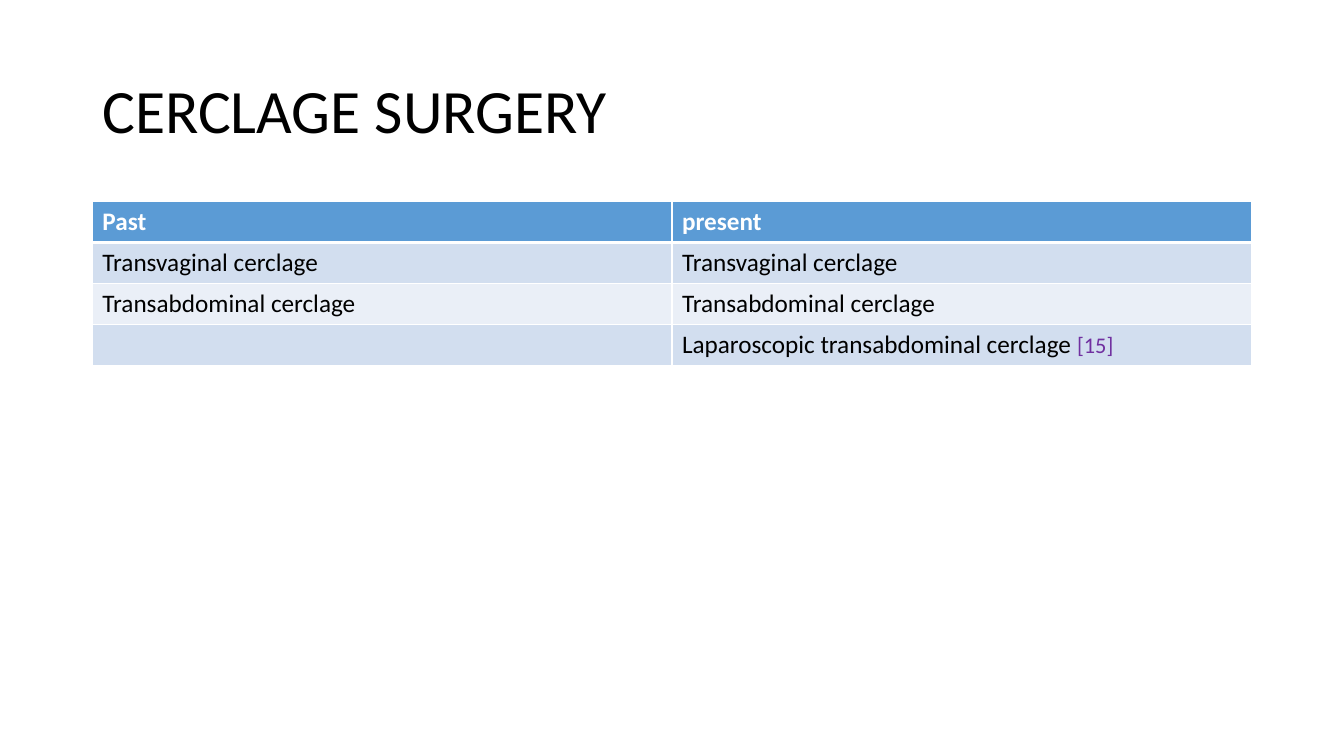
from lxml import etree
from pptx import Presentation
from pptx.dml.color import RGBColor
from pptx.enum import text
from pptx.oxml import ns
from pptx.util import Pt

FONT = "Calibri"
COLORS = {
    "text": "000000",
    "white": "FFFFFF",
    "header": "5B9BD5",
    "band_dark": "D2DEEF",
    "band_light": "EAEFF7",
    "citation": "7030A0",
}
LEFT, WIDTH = 66, 828
ROW_HEIGHT = 29.2

# Each cell is a list of (text, size, color) runs
HEADERS = ["Past", "present"]
ROWS = [
    ["Transvaginal cerclage", "Transvaginal cerclage"],
    ["Transabdominal cerclage", "Transabdominal cerclage"],
    ["", "Laparoscopic transabdominal cerclage "],
]
CITATION = "[15]"


def color(name):
    return RGBColor.from_string(COLORS[name])


def format_run(run, size, color_name, bold=False):
    run.font.name = FONT
    run.font.size = Pt(size)
    run.font.bold = bold
    run.font.color.rgb = color(color_name)


def add_title(slide, title):
    box = slide.shapes.add_textbox(Pt(LEFT), Pt(28.8), Pt(WIDTH), Pt(104.4))
    frame = box.text_frame
    frame.word_wrap = True
    frame.vertical_anchor = text.MSO_ANCHOR.MIDDLE
    frame.text = title
    paragraph = frame.paragraphs[0]
    paragraph.line_spacing = 0.9
    format_run(paragraph.runs[0], 44, "text")


def set_borders(cell, top, bottom):
    properties = cell._tc.get_or_add_tcPr()
    for side, width in (("L", 1), ("R", 1), ("T", top), ("B", bottom)):
        line = etree.SubElement(properties, ns.qn(f"a:ln{side}"), w=str(Pt(width)))
        fill = etree.SubElement(line, ns.qn("a:solidFill"))
        etree.SubElement(fill, ns.qn("a:srgbClr"), val=COLORS["white"])


def fill_cell(cell, content, row):
    # Thick rule between the header and the body
    set_borders(cell, 3 if row == 1 else 1, 3 if row == 0 else 1)
    if row == 0:
        fill_name, text_name = "header", "white"
    else:
        fill_name, text_name = ("band_dark" if row % 2 else "band_light"), "text"
    cell.fill.solid()
    cell.fill.fore_color.rgb = color(fill_name)
    cell.text_frame.text = content
    for run in cell.text_frame.paragraphs[0].runs:
        format_run(run, 18, text_name, bold=row == 0)


def add_table(slide, rows):
    columns = len(rows[0])
    frame = slide.shapes.add_table(
        len(rows), columns, Pt(LEFT), Pt(144), Pt(WIDTH), Pt(ROW_HEIGHT * len(rows))
    )
    table = frame.table
    for row, contents in enumerate(rows):
        table.rows[row].height = Pt(ROW_HEIGHT)
        for column, content in enumerate(contents):
            fill_cell(table.cell(row, column), content, row)
    return table


def add_citation(cell, citation):
    run = cell.text_frame.paragraphs[0].add_run()
    run.text = citation
    format_run(run, 16, "citation")


def main():
    presentation = Presentation()
    presentation.slide_width, presentation.slide_height = Pt(960), Pt(540)
    slide = presentation.slides.add_slide(presentation.slide_layouts[6])

    # Title
    add_title(slide, "CERCLAGE SURGERY")

    # Comparison table, with a citation in the last cell
    rows = [HEADERS] + ROWS
    table = add_table(slide, rows)
    add_citation(table.cell(len(rows) - 1, 1), CITATION)

    presentation.save("out.pptx")


if __name__ == "__main__":
    main()
